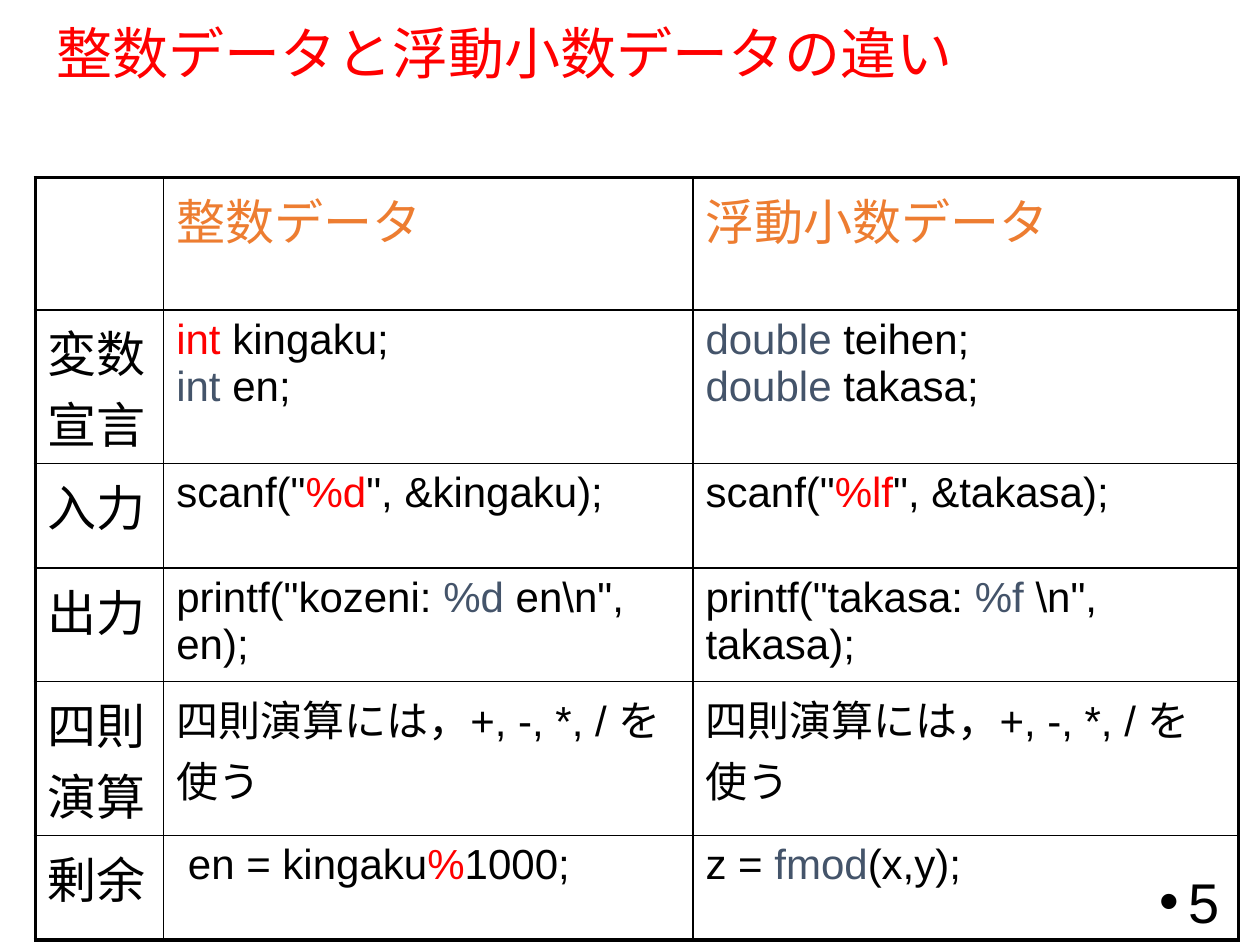
from lxml.etree import SubElement
from pptx import Presentation
from pptx.dml.color import RGBColor
from pptx.enum.text import MSO_ANCHOR, PP_ALIGN
from pptx.oxml.ns import qn
from pptx.util import Inches, Pt

COLORS = {"black": "000000", "red": "FF0000", "orange": "ED7D31", "slate": "44546A"}
FONT = "Arial"
HEADING, LABEL, CODE = 32, 28, 24

# Content: a cell is a list of paragraphs, a paragraph a list of (text, color) spans
TITLE = "整数データと浮動小数データの違い"
PAGE_NUMBER = "5"
HEADERS = ["整数データ", "浮動小数データ"]
ARITHMETIC = [[("四則演算には，+, -, *, / を使う", "black")]]
ROWS = [
    ("変数宣言",
     [[("int", "red"), (" kingaku;", "black")],
      [("int", "slate"), (" en;", "black")]],
     [[("double", "slate"), (" teihen;", "black")],
      [("double ", "slate"), ("takasa;", "black")]]),
    ("入力",
     [[('scanf("', "black"), ("%d", "red"), ('", &kingaku);', "black")]],
     [[('scanf("', "black"), ("%lf", "red"), ('", &takasa);', "black")]]),
    ("出力",
     [[('printf("kozeni: ', "black"), ("%d", "slate"), (' en\\n", en);', "black")]],
     [[('printf("takasa: ', "black"), ("%f", "slate"), (' \\n", takasa);', "black")]]),
    ("四則演算", ARITHMETIC, ARITHMETIC),
    ("剰余",
     [[(" en = kingaku", "black"), ("%", "red"), ("1000;", "black")]],
     [[("z =", "black"), (" fmod", "slate"), ("(x,y);", "black")]]),
]

# Grid, in inches; rows with a two-line label are taller
TABLE_LEFT, TABLE_TOP = 0.28, 1.41
COLUMN_WIDTHS = [1.02, 4.2, 4.33]
ROW_HEIGHTS = [1.05, 1.22, 0.83, 0.9, 1.22, 0.83]
OUTER_LINE, INNER_LINE = 2.25, 1


def write(frame, paragraphs, size):
    frame.word_wrap = True
    for index, spans in enumerate(paragraphs):
        para = frame.paragraphs[0] if index == 0 else frame.add_paragraph()
        for text, color in spans:
            span = para.add_run()
            span.text = text
            span.font.size = Pt(size)
            span.font.name = FONT
            span.font.color.rgb = RGBColor.from_string(COLORS[color])


def add_text(page, left, top, width, height, text, color):
    box = page.shapes.add_textbox(*map(Inches, (left, top, width, height)))
    box.text_frame.vertical_anchor = MSO_ANCHOR.MIDDLE
    write(box.text_frame, [[(text, color)]], HEADING)
    return box.text_frame.paragraphs[0]


def set_borders(cell, row, column):
    outer = {"lnL": column == 0, "lnR": column == len(COLUMN_WIDTHS) - 1,
             "lnT": row == 0, "lnB": row == len(ROW_HEIGHTS) - 1}
    properties = cell._tc.get_or_add_tcPr()
    for position, (side, is_outer) in enumerate(outer.items()):
        line = SubElement(properties, qn(f"a:{side}"),
                          w=str(Pt(OUTER_LINE if is_outer else INNER_LINE)))
        fill = SubElement(line, qn("a:solidFill"))
        SubElement(fill, qn("a:srgbClr"), val=COLORS["black"])
        properties.insert(position, line)


deck = Presentation()
deck.slide_width, deck.slide_height = Inches(10), Inches(7.5)
page = deck.slides.add_slide(deck.slide_layouts[6])

# Title
title = add_text(page, 0.35, 0.19, 9.25, 0.51, TITLE, "red")
title.line_spacing = 0.9

# Page number with a hanging bullet
number = add_text(page, 7.53, 6.95, 2.25, 0.4, PAGE_NUMBER, "black")
number.alignment = PP_ALIGN.RIGHT
settings = number._p.get_or_add_pPr()
settings.set("marL", str(Inches(0.23)))
settings.set("indent", str(-Inches(0.23)))
SubElement(settings, qn("a:buFont"), typeface=FONT)
SubElement(settings, qn("a:buChar"), char="•")

# Comparison table
table = page.shapes.add_table(
    len(ROW_HEIGHTS), len(COLUMN_WIDTHS), Inches(TABLE_LEFT), Inches(TABLE_TOP),
    Inches(sum(COLUMN_WIDTHS)), Inches(sum(ROW_HEIGHTS))).table
table.first_row = table.horz_banding = False
for column, width in zip(table.columns, COLUMN_WIDTHS):
    column.width = Inches(width)
for row, height in zip(table.rows, ROW_HEIGHTS):
    row.height = Inches(height)

header_row = [[]] + [[[(header, "orange")]] for header in HEADERS]
body_rows = [[[[(label, "black")]], *codes] for label, *codes in ROWS]
for row, contents in enumerate([header_row] + body_rows):
    for column, paragraphs in enumerate(contents):
        cell = table.cell(row, column)
        cell.fill.background()
        set_borders(cell, row, column)
        write(cell.text_frame, paragraphs, LABEL if row == 0 or column == 0 else CODE)

deck.save("out.pptx")
